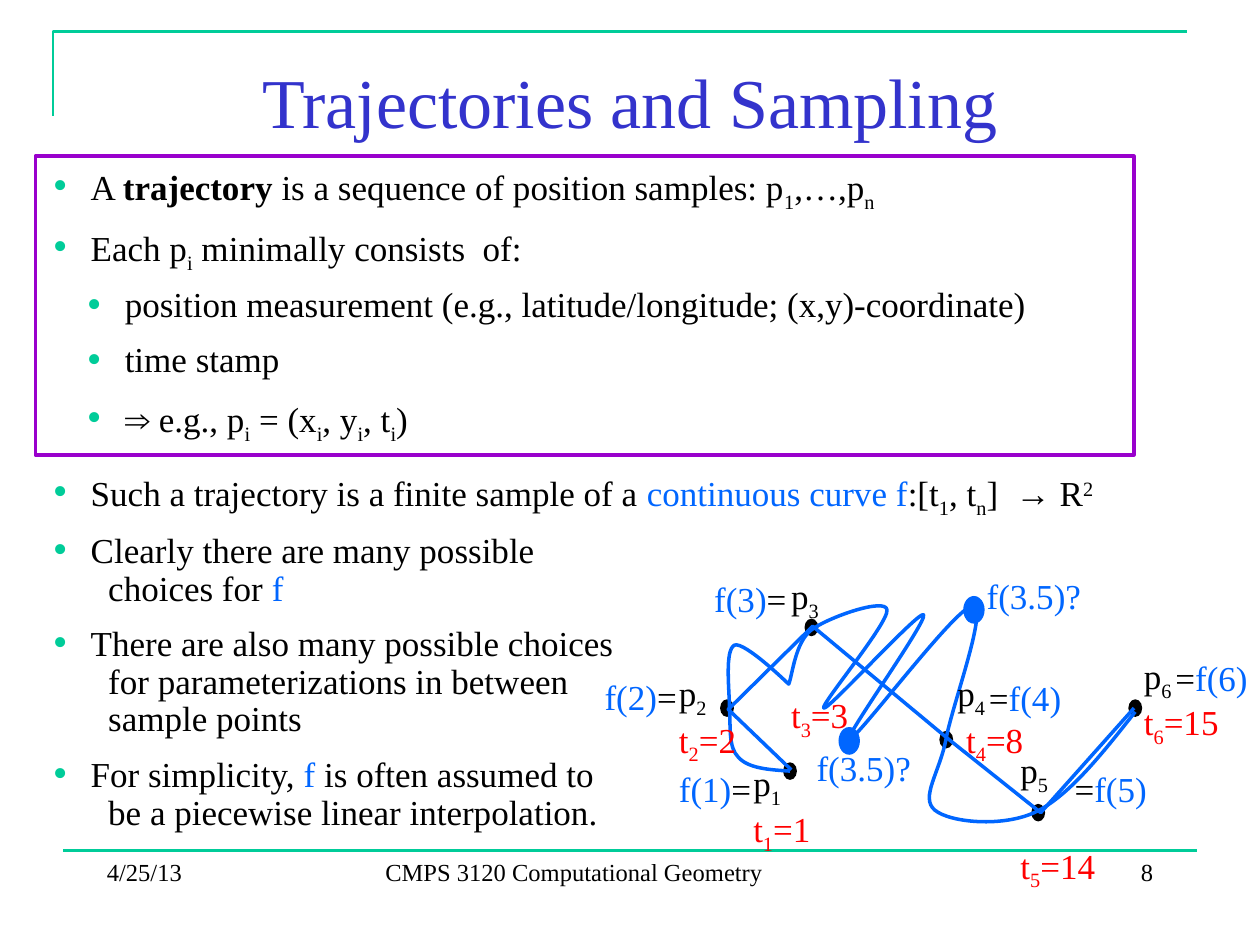
from lxml import etree
from pptx import Presentation
from pptx.dml.color import RGBColor
from pptx.enum.shapes import MSO_CONNECTOR, MSO_SHAPE
from pptx.enum.text import MSO_ANCHOR, PP_ALIGN
from pptx.oxml.ns import qn
from pptx.util import Inches, Pt

BLACK, BLUE, RED = "000000", "0066FF", "FF0000"
GREEN, PURPLE, INDIGO = "00CC99", "9900CC", "3333CC"


def rgb(value):
    return RGBColor.from_string(value)


def plain(text, color=BLACK):
    return text, color, 0


def sub(text, color=BLACK):
    return text, color, -25000


def blue(text):
    return plain(text, BLUE)


def indexed(*texts):
    return [sub(text) if number % 2 else plain(text) for number, text in enumerate(texts)]


def write_runs(paragraph, runs, size=20):
    paragraph.font.name = "Times New Roman"
    paragraph.font.size = Pt(size)
    for text, color, baseline in runs:
        for number, line in enumerate(text.split("\n")):
            if number:
                paragraph.add_line_break()
            run = paragraph.add_run()
            run.text = line
            run.font.color.rgb = rgb(color)
            if baseline:
                run.font._element.set("baseline", str(baseline))


def add_frame(slide, box, inset=None, wrap=True):
    frame = slide.shapes.add_textbox(*map(Inches, box)).text_frame
    frame.word_wrap = wrap
    if inset is not None:
        frame.margin_left = frame.margin_right = Inches(inset)
        frame.margin_top = frame.margin_bottom = Inches(inset)
    return frame


def add_line_text(slide, box, runs, size=20, align=PP_ALIGN.LEFT, wrap=True):
    frame = add_frame(slide, box, wrap=wrap)
    paragraph = frame.paragraphs[0]
    paragraph.alignment = align
    write_runs(paragraph, runs, size)
    return frame


def add_path(slide, points, color, width):
    corners = [(Inches(x), Inches(y)) for x, y in points]
    builder = slide.shapes.build_freeform(*corners[0])
    builder.add_line_segments(corners[1:], close=False)
    shape = builder.convert_to_shape()
    shape.shadow.inherit = False
    shape.fill.background()
    shape.line.color.rgb = rgb(color)
    shape.line.width = Pt(width)
    return shape


def add_curve(slide, knots, color, width):
    shape = add_path(slide, knots, color, width)
    segments = list(shape._element.iter(qn("a:lnTo")))
    for start in range(0, len(segments), 3):
        curve = etree.Element(qn("a:cubicBezTo"))
        segments[start].addprevious(curve)
        for segment in segments[start:start + 3]:
            curve.append(segment[0])
            segment.getparent().remove(segment)


def add_dot(slide, center, size, color):
    x, y = center
    width, height = size
    shape = slide.shapes.add_shape(
        MSO_SHAPE.OVAL, Inches(x - width / 2), Inches(y - height / 2), Inches(width), Inches(height))
    shape.shadow.inherit = False
    shape.fill.solid()
    shape.fill.fore_color.rgb = rgb(color)
    shape.line.fill.background()


def add_header(slide, left, top, width, height):
    add_path(slide, [(left, top + height), (left, top), (left + width, top)], GREEN, 1.5)
    title = add_line_text(slide, (0.75, 0.17, 8.5, 1.25), [plain("Trajectories and Sampling", INDIGO)],
                          40, PP_ALIGN.CENTER)
    title.vertical_anchor = MSO_ANCHOR.MIDDLE


def add_footer(slide, left, top, width):
    rule = slide.shapes.add_connector(
        MSO_CONNECTOR.STRAIGHT, Inches(left), Inches(top), Inches(left + width), Inches(top))
    rule.line.color.rgb = rgb(GREEN)
    rule.line.width = Pt(1.5)
    etree.SubElement(rule._element.spPr, qn("a:effectLst"))
    for offset, box_width, text, align in (
        (0.25, 2.08, "4/25/13", PP_ALIGN.LEFT),
        (2.46, 3.97, "CMPS 3120 Computational Geometry", PP_ALIGN.LEFT),
        (6.67, 2.08, "8", PP_ALIGN.RIGHT),
    ):
        add_line_text(slide, (left + offset, top, box_width, 0.5), [plain(text)], 14, align)


def add_bullet(paragraph, level):
    properties = paragraph._p.get_or_add_pPr()
    properties.set("marL", str(Inches(0.3 + 0.27 * level)))
    properties.set("indent", str(Inches(-0.3)))
    color = etree.Element(qn("a:buClr"))
    etree.SubElement(color, qn("a:srgbClr"), val=GREEN)
    size = etree.Element(qn("a:buSzPct"), val="120000")
    font = etree.Element(qn("a:buFont"), typeface="Times New Roman")
    mark = etree.Element(qn("a:buChar"), char="•")
    defaults = properties.find(qn("a:defRPr"))
    for element in (color, size, font, mark):
        defaults.addprevious(element)


def add_body(slide, box):
    items = [
        (0, 10, indexed("A ", "", "trajectory", "", " is a sequence of position samples: p", "1", ",…,p", "n")),
        (0, 10, indexed("Each p", "i", " minimally consists  of:")),
        (1, 10, [plain("position measurement (e.g., latitude/longitude; (x,y)-coordinate)")]),
        (1, 10, [plain("time stamp")]),
        (1, 10, indexed("⇒ e.g., p", "i", " = (x", "i", ", y", "i", ", t", "i", ")")),
        (0, 18, [plain("Such a trajectory is a finite sample of a "), blue("continuous curve f"),
                 *indexed(":[t", "1", ", t", "n", "]  → R"), ("2", BLACK, 30000)]),
        (0, 10, [plain("Clearly there are many possible\n  choices for "), blue("f")]),
        (0, 10, [plain("There are also many possible choices\n"
                       "  for parameterizations in between\n  sample points")]),
        (0, 10, [plain("For simplicity, "), blue("f "),
                 plain("is often assumed to\n  be a piecewise linear interpolation.")]),
    ]
    frame = add_frame(slide, box, inset=0.04)
    for number, (level, space, runs) in enumerate(items):
        paragraph = frame.add_paragraph() if number else frame.paragraphs[0]
        paragraph.line_spacing = 0.9
        paragraph.space_before = Pt(space)
        write_runs(paragraph, [run for run in runs if run[0]])
        add_bullet(paragraph, level)
    for run in frame.paragraphs[0].runs:
        if run.text == "trajectory":
            run.font.bold = True


def add_definition_border(slide, box):
    border = slide.shapes.add_shape(MSO_SHAPE.RECTANGLE, *map(Inches, box))
    border.shadow.inherit = False
    border.fill.background()
    border.line.color.rgb = rgb(PURPLE)
    border.line.width = Pt(2)


def add_sample_label(slide, box, index, time, space, lead):
    frame = add_frame(slide, box)
    lines = ([plain(lead + "p"), sub(index)],
             [plain(lead * 2 + "t", RED), sub(index, RED), plain("=" + time, RED)])
    for number, runs in enumerate(lines):
        paragraph = frame.add_paragraph() if number else frame.paragraphs[0]
        paragraph.line_spacing = 0.6
        paragraph.space_before = Pt(space if number else 10)
        write_runs(paragraph, runs)


def add_value_label(slide, box, runs, wrap=True):
    frame = add_line_text(slide, box, runs, align=PP_ALIGN.CENTER, wrap=wrap)
    frame.paragraphs[0].line_spacing = 0.6
    frame.paragraphs[0].space_before = Pt(10)


def add_trajectory(slide, left, top):
    def at(x, y):
        return left + x, top + y

    samples = [(1.58, 1.51), (1.08, 1.03), (1.75, 0.37), (2.82, 1.26), (3.56, 1.85), (4.3, 1.02)]
    centers = [(1.57, 1.52), (1.07, 1.02), (1.74, 0.38), (2.81, 1.27), (3.54, 1.85), (4.31, 1.02)]
    for x, y in centers:
        add_dot(slide, at(x, y), (0.11, 0.14), BLACK)
    add_path(slide, [at(x, y) for x, y in samples], BLUE, 2)
    knots = [
        (1.57, 1.52), (1.41, 1.51), (1.24, 1.5), (1.16, 1.41), (1.08, 1.33), (1.1, 1.17), (1.09, 1.02),
        (1.09, 0.88), (1.05, 0.56), (1.13, 0.52), (1.21, 0.49), (1.56, 0.83), (1.56, 0.83),
        (1.59, 0.76), (1.61, 0.5), (1.74, 0.4), (1.87, 0.3), (2.33, 0.14), (2.34, 0.24),
        (2.36, 0.34), (1.79, 1.02), (1.84, 1.02), (1.88, 1.03), (2.6, 0.24), (2.63, 0.28),
        (2.67, 0.32), (1.98, 1.28), (2.04, 1.27), (2.11, 1.26), (2.89, 0.21), (3.02, 0.21),
        (3.15, 0.21), (2.86, 0.99), (2.81, 1.26), (2.76, 1.53), (2.6, 1.73), (2.72, 1.83),
        (2.84, 1.93), (3.27, 1.97), (3.53, 1.84), (3.79, 1.71), (4.05, 1.38), (4.31, 1.05),
    ]
    add_curve(slide, [at(x, y) for x, y in knots], BLUE, 2)

    labels = [
        (1.18, 1.49, "1", 10, "", 0.58, 1.56), (0.59, 0.78, "2", 10, "", -0.01, 0.83),
        (1.48, 0.01, "3", 51.5, "", 0.86, 0.05), (2.73, 0.78, "8", 10, " ", 3.04, 0.84),
        (3.3, 1.39, "14", 38, "", 3.72, 1.56), (4.28, 0.64, "15", 10, "", 4.52, 0.68),
    ]
    for number, (x, y, time, space, lead, value_x, value_y) in enumerate(labels, 1):
        add_sample_label(slide, (*at(x, y), 0.91, 0.67), str(number), time, space, lead)
        runs = [blue(f"f({number})"), plain("=")]
        add_value_label(slide, (*at(value_x, value_y), 0.79, 0.32), runs if number < 4 else runs[::-1])

    for dot, label in (((2.04, 1.28), (1.68, 1.39)), ((3.03, 0.24), (3.03, 0.03))):
        add_dot(slide, at(*dot), (0.17, 0.22), BLUE)
        add_value_label(slide, (*at(*label), 0.95, 0.32), [blue("f(3.5)?")], wrap=False)


def main():
    presentation = Presentation()
    presentation.slide_width, presentation.slide_height = Inches(10), Inches(7.5)
    slide = presentation.slides.add_slide(presentation.slide_layouts[6])
    add_header(slide, 0.42, 0.25, 9, 0.67)
    add_footer(slide, 0.5, 6.75, 9)
    add_body(slide, (0.38, 1.28, 9.08, 5.49))
    add_definition_border(slide, (0.28, 1.24, 8.72, 2.37))
    add_trajectory(slide, 4.7, 4.6)
    presentation.save("out.pptx")


if __name__ == "__main__":
    main()
